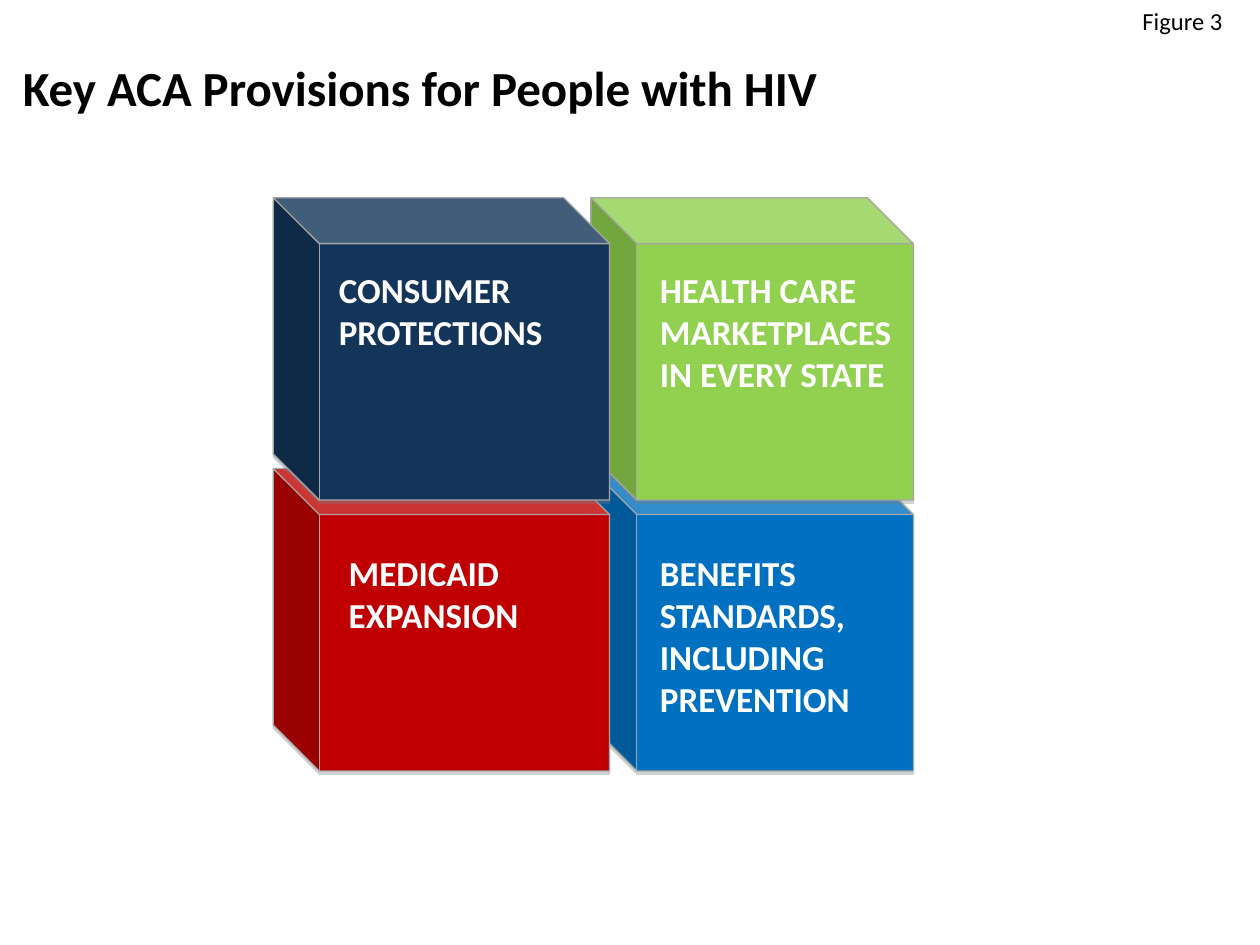
import pptx
import pptx.util
import pptx.dml.color
import pptx.enum.shapes
import pptx.enum.text
import pptx.oxml

Pt = pptx.util.Pt
ALIGN = pptx.enum.text.PP_ALIGN
NS = "http://schemas.openxmlformats.org/drawingml/2006/main"
SHADE = (
    f'<a:outerShdw xmlns:a="{NS}" blurRad="0" dist="{Pt(1.8)}" dir="5400000" '
    'algn="t" rotWithShape="0"><a:srgbClr val="808080"><a:alpha val="35000"/>'
    "</a:srgbClr></a:outerShdw>"
)


def color(code):
    return pptx.dml.color.RGBColor.from_string(code)


def write(frame, text, size=20, ink="FFFFFF", bold=True, align=ALIGN.LEFT, wrap=True):
    frame.word_wrap = wrap
    frame.auto_size = pptx.enum.text.MSO_AUTO_SIZE.NONE
    frame.vertical_anchor = pptx.enum.text.MSO_ANCHOR.TOP
    line = frame.paragraphs[0]
    line.alignment = align
    run = line.add_run()
    run.text = text
    run.font.name = "Calibri"
    run.font.size = Pt(size)
    run.font.bold = bold
    run.font.color.rgb = color(ink)


def place(shape, left, top, width, height):
    shape.left, shape.top = Pt(left), Pt(top)
    shape.width, shape.height = Pt(width), Pt(height)


def label(slide, text, box, **style):
    shape = slide.shapes.add_textbox(*map(Pt, box))
    write(shape.text_frame, text, **style)


def cube(slide, box, fill):
    kind = pptx.enum.shapes.MSO_SHAPE.CUBE
    shape = slide.shapes.add_shape(kind, *map(Pt, box))
    shape.adjustments[0] = 0.152
    shape.fill.solid()
    shape.fill.fore_color.rgb = color(fill)
    shape.line.color.rgb = color("A6A6A6")
    shape.line.width = Pt(0.75)
    shape.shadow.inherit = False
    props = shape.element.spPr
    props.xfrm.set("flipH", "1")
    props.find(f"{{{NS}}}effectLst").append(pptx.oxml.parse_xml(SHADE))


def main():
    deck = pptx.Presentation()
    deck.slide_width, deck.slide_height = Pt(720), Pt(540)
    slide = deck.slides.add_slide(deck.slide_layouts[5])

    title = slide.shapes.title
    place(title, 5.8, 29.5, 720, 84)
    write(title.text_frame, "Key ACA Provisions for People with HIV", size=28, ink="000000")
    label(slide, "Figure 3", (640.8, 0, 69.8, 24.5), size=14, ink="000000",
          bold=False, align=ALIGN.CENTER, wrap=False)

    cols = ((337.7, 184.3), (156.2, 192.2))
    rows = (267.8, 113)
    fills = iter(("0070C0", "92D050", "C00000", "133559"))
    for left, width in cols:
        for top in rows:
            cube(slide, (left, top, width, 172.8), next(fills))

    high, low = 149.8, 311.8
    for text, left, top, width, height in (
        ("CONSUMER PROTECTIONS", 186.5, high, 134, 55.4),
        ("HEALTH CARE MARKETPLACES IN EVERY STATE", 370, high, 147.6, 80),
        ("MEDICAID EXPANSION", 192.2, low, 134, 55.4),
        ("BENEFITS STANDARDS, INCLUDING PREVENTION", 370, low, 134, 104.4),
    ):
        label(slide, text, (left, top, width, height))

    deck.save("out.pptx")


if __name__ == "__main__":
    main()
